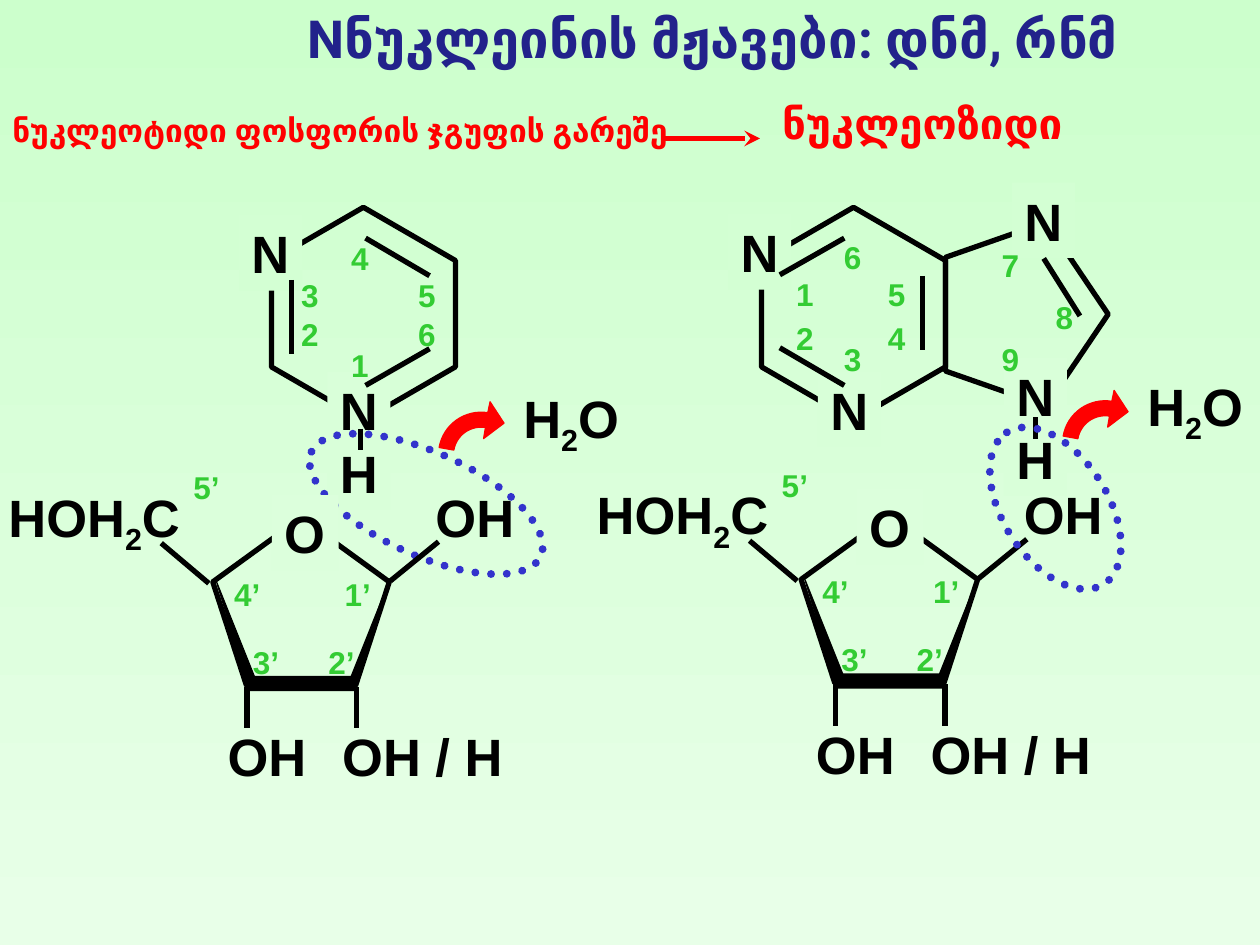
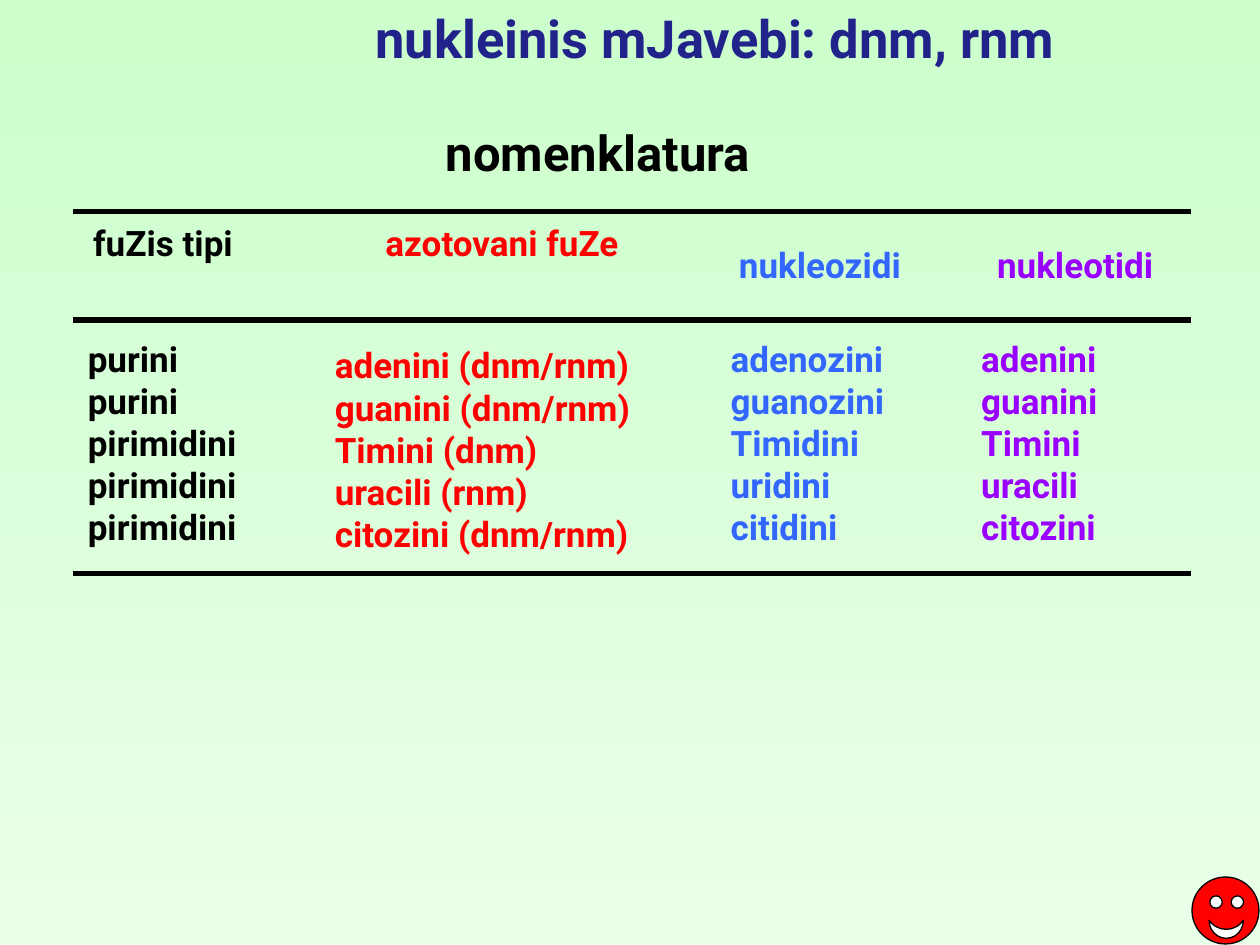
from math import cos, radians, sin

from lxml import etree
from pptx import Presentation
from pptx.dml.color import RGBColor
from pptx.enum.dml import MSO_LINE
from pptx.enum.shapes import MSO_CONNECTOR, MSO_SHAPE
from pptx.enum.text import MSO_ANCHOR, MSO_AUTO_SIZE, PP_ALIGN
from pptx.oxml.ns import qn
from pptx.util import Cm, Pt

SLIDE_W, SLIDE_H = 25.4, 19.05
BLACK, WHITE, RED = "000000", "FFFFFF", "FF0000"
NAVY, GREEN, DOTS = "22228B", "33CC33", "3333CC"
BLUE, VIOLET = "3366FF", "9900FF"
SKY_TOP, SKY_BOTTOM = "CCFFCC", "E8FFE8"
ATOM, TERM = "Arial", "Roboto"
ATOM_SIZE, ATOM_H = 30, 1.52
NUMBER_SIZE, NUMBER_H = 18, 1.02
HEX_W, HEX_H = 3.71, 4.29


def rgb(colour):
    return RGBColor.from_string(colour)


def sky_at(y):
    """Background colour at height y."""
    top, bottom = rgb(SKY_TOP), rgb(SKY_BOTTOM)
    return "".join(f"{round(a + (b - a) * y / SLIDE_H):02X}" for a, b in zip(top, bottom))


def paint_background(master):
    fill = master.background.fill
    fill.gradient()
    fill.gradient_angle = 270
    for stop, colour in zip(fill.gradient_stops, (SKY_TOP, SKY_BOTTOM)):
        stop.color.rgb = rgb(colour)


def write(paragraph, text, size, colour, font):
    """Add text run by run; parts between bars alternate normal and subscript."""
    for index, part in enumerate(text.split("|")):
        run = paragraph.add_run()
        run.text = part
        run.font.size, run.font.bold, run.font.name = Pt(size), True, font
        run.font.color.rgb = rgb(colour)
        if index % 2:
            run._r.get_or_add_rPr().set("baseline", "-25000")


def label(slide, x, y, w, h, lines, size, colour, font=TERM, wrap=True, align=PP_ALIGN.LEFT):
    box = slide.shapes.add_textbox(Cm(x), Cm(y), Cm(w), Cm(h))
    frame = box.text_frame
    frame.word_wrap = wrap
    for index, line in enumerate(lines):
        paragraph = frame.add_paragraph() if index else frame.paragraphs[0]
        paragraph.alignment = align
        write(paragraph, line, size, colour, font)
    return box


def atom(slide, x, y, w, *symbols):
    return label(slide, x, y, w, ATOM_H if len(symbols) == 1 else 2.79,
                 symbols, ATOM_SIZE, BLACK, ATOM, wrap=False)


def masked_atom(slide, x, y, w, *symbols):
    """Atom whose box hides the ring outline behind it."""
    box = atom(slide, x, y, w, *symbols)
    box.fill.solid()
    box.fill.fore_color.rgb = rgb(sky_at(y + box.height.cm / 2))


def numbers(slide, x, y, w, places):
    for text, (dx, dy) in places.items():
        label(slide, x + dx, y + dy, w, NUMBER_H, [text], NUMBER_SIZE, GREEN, ATOM, wrap=False)


def line(slide, x1, y1, x2, y2, colour=BLACK):
    connector = slide.shapes.add_connector(MSO_CONNECTOR.STRAIGHT, Cm(x1), Cm(y1), Cm(x2), Cm(y2))
    connector.line.width = Pt(3)
    connector.line.color.rgb = rgb(colour)
    etree.SubElement(connector._element.spPr, qn("a:effectLst"))
    return connector


def bonds(slide, x, y, segments):
    for x1, y1, x2, y2 in segments:
        line(slide, x + x1, y + y1, x + x2, y + y2)


def style(shape, fill, outline, width):
    shape.shadow.inherit = False
    if fill:
        shape.fill.solid()
        shape.fill.fore_color.rgb = rgb(fill)
    else:
        shape.fill.background()
    shape.line.color.rgb = rgb(outline)
    shape.line.width = Pt(width)


def figure(slide, kind, x, y, w, h, fill=None, outline=BLACK, width=3.0, angle=0):
    shape = slide.shapes.add_shape(kind, Cm(x), Cm(y), Cm(w), Cm(h))
    shape.rotation = angle
    style(shape, fill, outline, width)
    return shape


def upright(slide, kind, x, y, w, h):
    """Ring turned a quarter so that it fills the box given."""
    shift = (h - w) / 2
    return figure(slide, kind, x - shift, y + shift, h, w, angle=90)


def outline(slide, x, y, points, colour):
    (x0, y0), *rest = [(Cm(x + dx), Cm(y + dy)) for dx, dy in points]
    builder = slide.shapes.build_freeform(x0, y0)
    builder.add_line_segments(rest, close=True)
    style(builder.convert_to_shape(), colour, colour, 0.75)


def six_ring(slide, x, y):
    ring = upright(slide, MSO_SHAPE.HEXAGON, x, y, HEX_W, HEX_H)
    ring.adjustments[0] = 0.289


def pyrimidine(slide, x, y):
    six_ring(slide, x, y)
    masked_atom(slide, x - 0.65, y + 0.16, 1.27, "N")
    masked_atom(slide, x + 1.13, y + 3.31, 1.27, "N", "H")
    bonds(slide, x, y, [(1.9, 3.59, 3.19, 2.85), (3.19, 1.38, 1.9, 0.62),
                        (0.4, 1.46, 0.4, 2.96), (1.79, 4.46, 1.79, 4.89)])
    numbers(slide, x, y, 0.86, {"1": (1.36, 2.68), "2": (0.35, 2.04), "3": (0.35, 1.25),
                                "4": (1.36, 0.52), "5": (2.71, 1.25), "6": (2.71, 2.04)})


def purine(slide, x, y):
    six_ring(slide, x, y)
    upright(slide, MSO_SHAPE.REGULAR_PENTAGON, x + HEX_W, y + 0.3, 3.28, 3.71)
    for dx, dy in [(-0.67, 0.14), (1.14, 3.31), (5.05, -0.5)]:
        masked_atom(slide, x + dx, y + dy, 1.27, "N")
    masked_atom(slide, x + 4.89, y + 3.03, 1.27, "N", "H")
    bonds(slide, x, y, [(3.24, 1.38, 3.24, 2.88), (1.67, 3.59, 0.37, 2.83),
                        (0.37, 1.36, 1.67, 0.62), (5.69, 1.03, 6.42, 2.19),
                        (5.53, 4.23, 5.53, 4.66)])
    numbers(slide, x, y, 0.86, {"1": (0.45, 1.23), "2": (0.45, 2.12), "3": (1.41, 2.55),
                                "4": (2.3, 2.12), "5": (2.3, 1.23), "6": (1.41, 0.49),
                                "7": (4.59, 0.65), "8": (5.68, 1.71), "9": (4.59, 2.55)})


def sugar(slide, x, y, oxygen):
    """Ribose with its ring in a box at x, y; oxygen is the offset of the ring O."""
    numbers(slide, x, y, 1.04, {"1’": (2.41, 1.02), "2’": (2.08, 2.39), "3’": (0.56, 2.39),
                                "4’": (0.18, 1.02), "5’": (-0.64, -1.12)})
    figure(slide, MSO_SHAPE.REGULAR_PENTAGON, x, y, 3.56, 3.38)
    masked_atom(slide, x + oxygen[0], y + oxygen[1], 1.35, "O")
    bonds(slide, x, y, [(3.58, 1.27, 4.55, 0.48), (-0.08, 1.32, -1.04, 0.51),
                        (2.9, 3.4, 2.9, 4.24), (0.69, 3.4, 0.69, 4.24)])
    for dx, dy, w, group in [(-4.37, -0.79, 4.01, "HOH|2|C"), (4.24, -0.79, 2.11, "OH"),
                             (0.05, 4.04, 2.11, "OH"), (2.36, 4.04, 3.76, "OH / H")]:
        atom(slide, x + dx, y + dy, w, group)
    outline(slide, x, y, [(0.08, 1.3), (0.74, 3.48), (2.87, 3.48),
                          (3.56, 1.27), (2.79, 3.2), (0.84, 3.2)], BLACK)


def water_release(slide, x, y):
    """Curved arrow bent round x, y, with the water it points to."""
    def arc(radius, angles):
        return [(radius * cos(radians(a)), -radius * sin(radians(a))) for a in angles]

    sweep = [170 - 89 * step / 16 for step in range(17)]
    head = [(0.18, -1.07), (0.46, -0.64), (0.05, -0.33)]
    outline(slide, x, y, arc(0.86, sweep) + head + arc(0.56, sweep[::-1]), RED)
    atom(slide, x + 0.6, y - 1.52, 2.49, "H|2|O")


def leaving_group(slide, x, y, w, h, angle):
    loop = figure(slide, MSO_SHAPE.OVAL, x, y, w, h, None, DOTS, 4.5, angle)
    loop.line.dash_style = MSO_LINE.ROUND_DOT
    loop.line._get_or_add_ln().set("cap", "rnd")


def smiley(slide, x, y):
    for kind, dx, dy, w, h, fill, angle in [
            (MSO_SHAPE.OVAL, 0, 0, 1.35, 1.35, RED, 0),
            (MSO_SHAPE.OVAL, 0.36, 0.38, 0.25, 0.25, WHITE, 0),
            (MSO_SHAPE.OVAL, 0.79, 0.38, 0.25, 0.25, WHITE, 0),
            (MSO_SHAPE.MOON, 0.51, 0.71, 0.36, 0.69, WHITE, 270)]:
        figure(slide, kind, x + dx, y + dy, w, h, fill, BLACK, 0.75, angle)


def titled_slide(prs, text, x, w, align):
    slide = prs.slides.add_slide(prs.slide_layouts[5])
    title = slide.shapes.title
    title.left, title.top, title.width, title.height = Cm(x), Cm(0), Cm(w), Cm(1.55)
    frame = title.text_frame
    frame.auto_size = MSO_AUTO_SIZE.NONE
    frame.vertical_anchor = MSO_ANCHOR.TOP
    frame.word_wrap = True
    frame.paragraphs[0].alignment = align
    write(frame.paragraphs[0], text, 30, NAVY, TERM)
    return slide


def nucleoside_slide(prs):
    slide = titled_slide(prs, "Nნუკლეინის მჟავები: დნმ, რნმ", 5.94, 16.99, PP_ALIGN.LEFT)
    label(slide, 0, 2.11, 19.46, 1.02, ["ნუკლეოტიდი ფოსფორის ჯგუფის გარეშე"], 18, RED)
    label(slide, 15.52, 1.85, 6.86, 1.3, ["ნუკლეოზიდი"], 24, RED)
    arrow = line(slide, 13.41, 2.79, 15.32, 2.79, RED)
    etree.SubElement(arrow.line._get_or_add_ln(), qn("a:tailEnd"), type="stealth")

    pyrimidine(slide, 5.47, 4.18)
    water_release(slide, 9.7, 9.17)
    leaving_group(slide, 6.05, 9.12, 5.08, 2.08, 24.5)
    sugar(slide, 4.29, 10.44, (1.19, -0.46))

    purine(slide, 15.35, 4.18)
    water_release(slide, 22.28, 8.94)
    sugar(slide, 16.15, 10.39, (1.12, -0.53))
    leaving_group(slide, 19.46, 9.19, 3.63, 2.11, 57.4)


def name_column(slide, colour, header, names, align=PP_ALIGN.CENTER):
    """Header and names, each given as (x, y, width, lines)."""
    for (x, y, w, lines), h, side in [(header, 1.12, align), (names, 4.52, PP_ALIGN.LEFT)]:
        label(slide, x, y, w, h, lines, 20, colour, align=side)


def nomenclature_slide(prs):
    slide = titled_slide(prs, "nukleinis mJavebi: dnm, rnm", 6.73, 15.37, PP_ALIGN.CENTER)
    smiley(slide, 24.03, 17.68)
    label(slide, 8.74, 2.34, 7.67, 1.45, ["nomenklatura"], 28, BLACK)
    name_column(slide, BLACK, (1.63, 4.34, 3.84, ["fuZis tipi"]),
                (1.52, 6.68, 4.37, ["purini"] * 2 + ["pirimidini"] * 3), PP_ALIGN.LEFT)
    name_column(slide, RED, (7.26, 4.34, 5.72, ["azotovani fuZe"]),
                (6.5, 6.81, 7.39, ["adenini (dnm/rnm)", "guanini (dnm/rnm)", "Timini (dnm)",
                                   "uracili (rnm)", "citozini (dnm/rnm)"]))
    name_column(slide, BLUE, (13.89, 4.78, 5.28, ["nukleozidi"]),
                (14.48, 6.68, 4.14, ["adenozini", "guanozini", "Timidini", "uridini", "citidini"]))
    name_column(slide, VIOLET, (19.02, 4.78, 5.31, ["nukleotidi"]),
                (19.53, 6.68, 3.94, ["adenini", "guanini", "Timini", "uracili", "citozini"]))
    for y in (4.27, 6.45, 11.56):
        line(slide, 1.47, y, 24, y)


def main():
    prs = Presentation()
    prs.slide_width, prs.slide_height = Cm(SLIDE_W), Cm(SLIDE_H)
    paint_background(prs.slide_master)
    nucleoside_slide(prs)
    nomenclature_slide(prs)
    prs.save("out.pptx")


if __name__ == "__main__":
    main()
